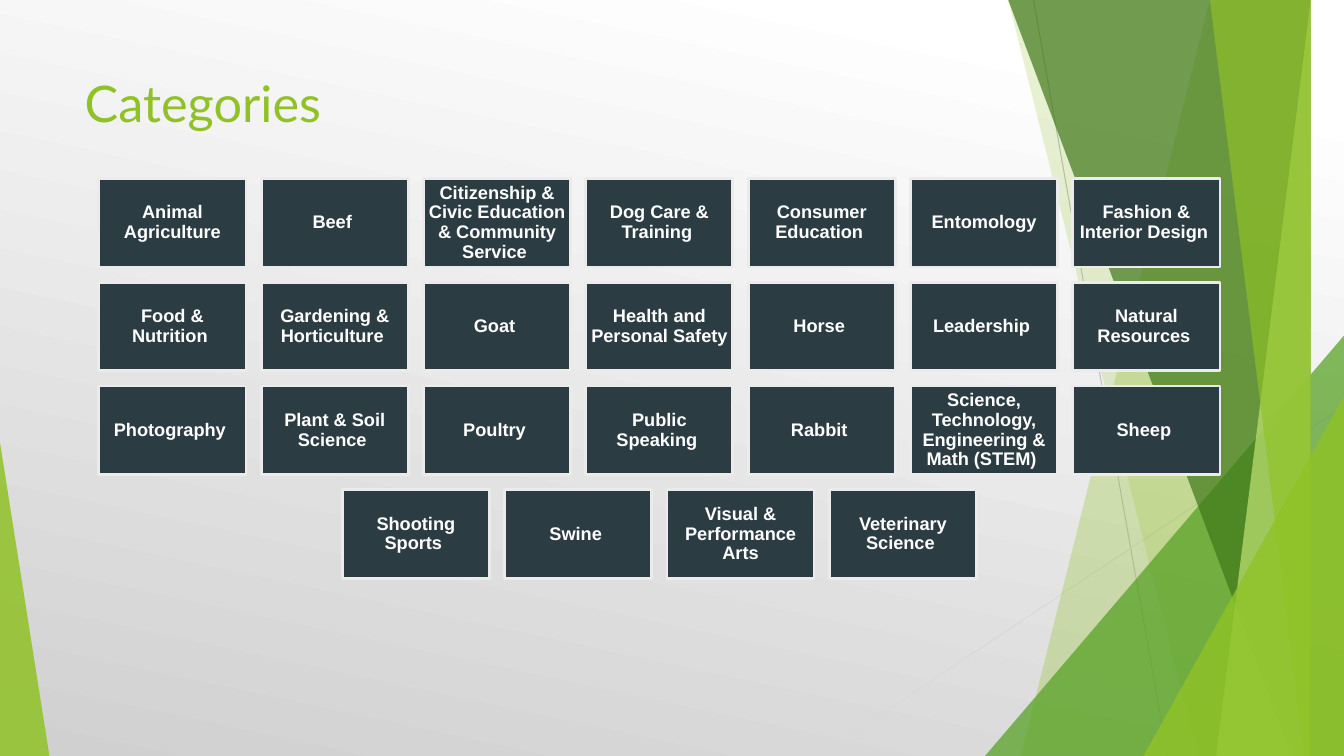
from dataclasses import dataclass

from lxml.etree import SubElement
from pptx import Presentation
from pptx.dml.color import RGBColor
from pptx.enum.shapes import MSO_CONNECTOR, MSO_SHAPE
from pptx.enum.text import MSO_ANCHOR, MSO_AUTO_SIZE, PP_ALIGN
from pptx.oxml.ns import qn
from pptx.util import Inches, Pt

WIDTH, HEIGHT = 13.33, 7.5


@dataclass(frozen=True)
class Theme:
    lime: str = "90C226"
    green: str = "54A021"
    forest: str = "3F7819"
    pale_lime: str = "C0E474"
    tile: str = "2C3C43"
    tile_edge: str = "EBEBEB"
    white: str = "FFFFFF"
    shade: str = "D0D0D0"
    ray_dark: str = "BFBFBF"
    ray_light: str = "D9D9D9"
    title_font: str = "Lato"
    tile_font: str = "Arial"
    title_size: int = 36
    tile_size: int = 13


def apply(target, **values):
    for name, value in values.items():
        setattr(target, name, value)


class SlideBuilder:
    def __init__(self, slide, theme):
        self.s = slide
        self.theme = theme

    def background(self, start, end, angle):
        fill = self.s.background.fill
        fill.gradient()
        fill.gradient_angle = angle
        for stop, (position, color) in zip(fill.gradient_stops, (start, end)):
            stop.position = position
            stop.color.rgb = RGBColor.from_string(color)

    def paint(self, sp, color, opacity=100):
        sp.shadow.inherit = False
        sp.fill.solid()
        sp.fill.fore_color.rgb = RGBColor.from_string(color)
        sp.line.fill.background()
        if opacity < 100:
            rgb = sp.fill._xPr.find(f"{qn('a:solidFill')}/{qn('a:srgbClr')}")
            SubElement(rgb, qn("a:alpha"), val=str(opacity * 1000))

    def text(self, sp, words, frame, paragraph, font, color):
        tf = sp.text_frame
        apply(tf, word_wrap=True, auto_size=MSO_AUTO_SIZE.NONE, **frame)
        p = tf.paragraphs[0]
        apply(p, **paragraph)
        r = p.add_run()
        r.text = words
        apply(r.font, **font)
        r.font.color.rgb = RGBColor.from_string(color)

    def title(self, words, left, top, width, height):
        sp = self.s.shapes.title
        apply(sp, left=Inches(left), top=Inches(top),
              width=Inches(width), height=Inches(height))
        self.text(sp, words, {"vertical_anchor": MSO_ANCHOR.TOP},
                  {"alignment": PP_ALIGN.LEFT},
                  {"name": self.theme.title_font, "size": Pt(self.theme.title_size)},
                  self.theme.lime)

    def ray(self, start, end, color):
        line = self.s.shapes.add_connector(
            MSO_CONNECTOR.STRAIGHT, *(Inches(v) for v in (*start, *end)))
        line.line.width = Pt(0.75)
        line.line.color.rgb = RGBColor.from_string(color)
        SubElement(line._element.spPr, qn("a:effectLst"))

    def band(self, top_x, bottom_x, color, opacity):
        """Full-height band from a slanted left edge to the right slide edge."""
        builder = self.s.shapes.build_freeform(top_x, 0, scale=Inches(1))
        builder.add_line_segments(
            [(WIDTH, 0), (WIDTH, HEIGHT), (bottom_x, HEIGHT)], close=True)
        self.paint(builder.convert_to_shape(), color, opacity)

    def corner(self, left, top, width, apex, color, opacity):
        """Triangle standing on the bottom slide edge, apex 0 left or 1 right."""
        sp = self.s.shapes.add_shape(
            MSO_SHAPE.ISOSCELES_TRIANGLE, Inches(left), Inches(top),
            Inches(width), Inches(HEIGHT - top))
        sp.adjustments[0] = apex
        self.paint(sp, color, opacity)

    def tile(self, words, left, top, width, height):
        sp = self.s.shapes.add_shape(
            MSO_SHAPE.RECTANGLE, Inches(left), Inches(top),
            Inches(width), Inches(height))
        self.paint(sp, self.theme.tile)
        sp.line.width = Pt(2)
        sp.line.color.rgb = RGBColor.from_string(self.theme.tile_edge)
        margins = {f"margin_{side}": Inches(0.05)
                   for side in ("left", "top", "right", "bottom")}
        self.text(sp, words, {"vertical_anchor": MSO_ANCHOR.MIDDLE, **margins},
                  {"alignment": PP_ALIGN.CENTER, "line_spacing": 0.9},
                  {"name": self.theme.tile_font, "bold": True,
                   "size": Pt(self.theme.tile_size)},
                  self.theme.white)

    def centred_tiles(self, rows, center, top, size, step):
        width, height = size
        for i, row in enumerate(rows):
            left = center - ((len(row) - 1) * step[0] + width) / 2
            for j, words in enumerate(row):
                self.tile(words, left + j * step[0], top + i * step[1], width, height)


CATEGORIES = [
    ["Animal Agriculture", "Beef ",
     "Citizenship & Civic Education & Community Service ",
     "Dog Care & Training ", "Consumer Education ", "Entomology",
     "Fashion & Interior Design "],
    ["Food & Nutrition ", "Gardening & Horticulture ", "Goat ",
     "Health and Personal Safety ", "Horse ", "Leadership ",
     "Natural Resources "],
    ["Photography ", "Plant & Soil Science ", "Poultry ", "Public Speaking ",
     "Rabbit ", "Science, Technology, Engineering & Math (STEM) ", "Sheep "],
    ["Shooting Sports ", "Swine ", "Visual & Performance Arts",
     "Veterinary Science "],
]


def main():
    prs = Presentation()
    apply(prs, slide_width=Inches(WIDTH), slide_height=Inches(HEIGHT))
    theme = Theme()
    b = SlideBuilder(prs.slides.add_slide(prs.slide_layouts[5]), theme)

    b.background((0.1, theme.white), (1, theme.shade), angle=258)
    b.ray((10.25, 0), (11.58, HEIGHT), theme.ray_dark)
    b.ray((WIDTH, 4.03), (8.12, HEIGHT), theme.ray_light)
    b.band(12.28, 10.04, theme.lime, 30)
    b.band(10.5, 11.83, theme.lime, 20)
    b.corner(9.77, 3.33, 3.56, 1, theme.green, 72)
    b.band(10.21, 12.91, theme.forest, 70)
    b.band(13.03, 11.92, theme.pale_lime, 70)
    b.band(11.96, 13.18, theme.lime, 65)
    b.corner(11.34, 3.93, 1.99, 1, theme.lime, 80)
    b.corner(0, 4.39, 0.49, 0, theme.lime, 85)

    b.title("Categories", 0.74, 0.67, 9.4, 1.44)
    b.centred_tiles(CATEGORIES, center=6.54, top=1.77,
                    size=(1.46, 0.88), step=(1.61, 1.03))
    prs.save("out.pptx")


if __name__ == "__main__":
    main()
